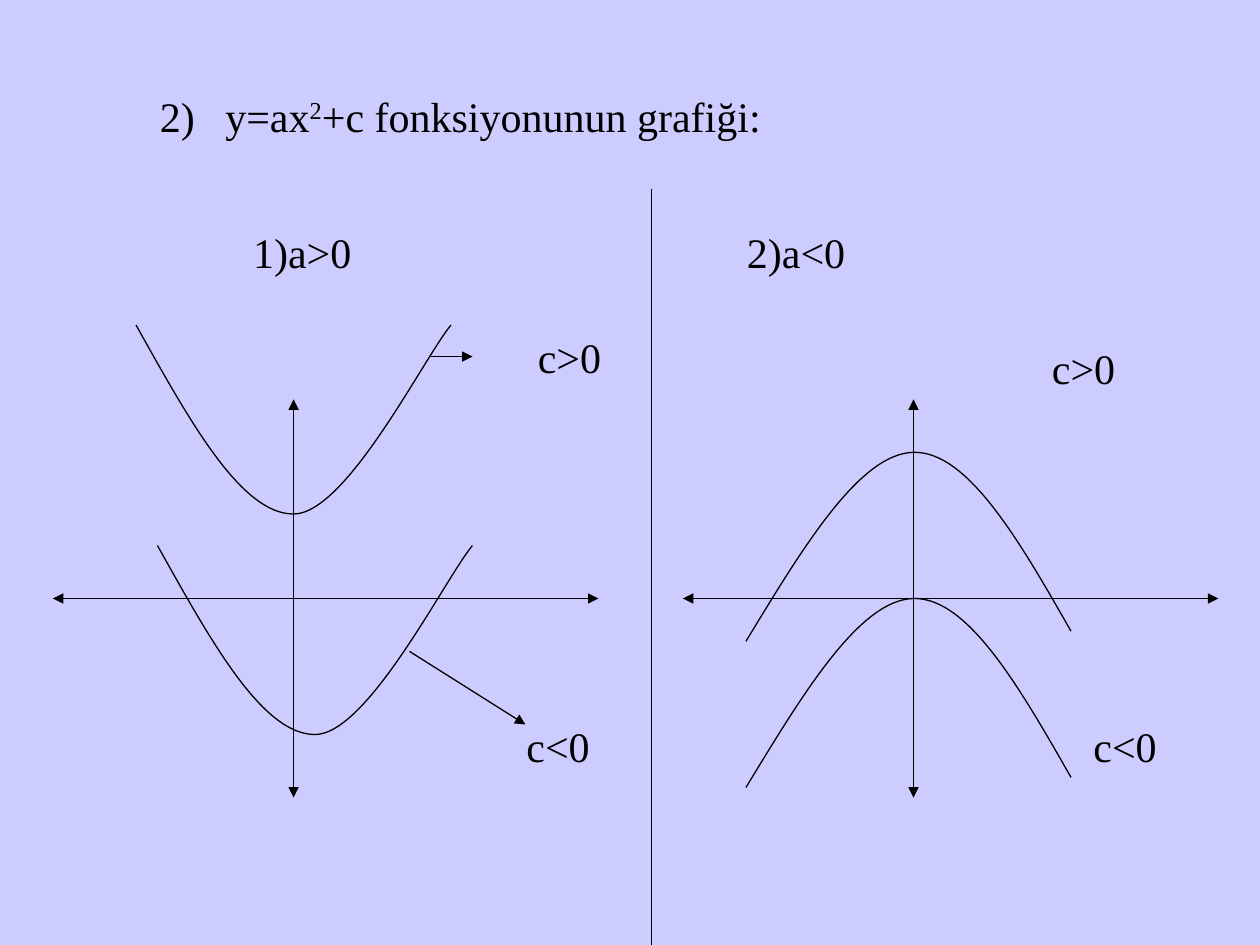
from lxml import etree
from pptx import Presentation
from pptx.dml.color import RGBColor
from pptx.enum import shapes, text
from pptx.oxml.ns import qn
from pptx.util import Inches, Pt

BACK = RGBColor(0xCC, 0xCC, 0xFF)
INK = RGBColor(0, 0, 0)
FONT = "Times New Roman"

# Bezier points: start, then two segments of three points each
UP = [(0, 0), (0.42, 0.75), (0.83, 1.5), (1.25, 1.5),
      (1.67, 1.5), (2.29, 0.25), (2.5, 0)]
DOWN = [(0, 1.51), (0.45, 0.77), (0.9, 0.02), (1.33, 0.01),
        (1.76, 0), (2.17, 0.71), (2.58, 1.43)]


def label(slide, x, y, width, *parts):
    """Add one line of text; every second part is superscript."""
    box = slide.shapes.add_textbox(Inches(x), Inches(y), Inches(width), Inches(0.5))
    frame = box.text_frame
    frame.word_wrap = True
    frame.auto_size = text.MSO_AUTO_SIZE.SHAPE_TO_FIT_TEXT
    para = frame.paragraphs[0]
    for i, part in enumerate(parts):
        run = para.add_run()
        run.text = part
        if i % 2:
            run.font._element.set("baseline", "30000")
    return para


def style(para):
    para.font.name = FONT
    para.font.size = Pt(24)
    para.font.color.rgb = INK


def line(slide, start, end, head=True):
    """Add a straight line, with an arrowhead at its end if wanted."""
    item = slide.shapes.add_connector(
        shapes.MSO_CONNECTOR.STRAIGHT, *map(Inches, start + end))
    item.line.color.rgb = INK
    item.line.width = Pt(0.75)
    if head:
        etree.SubElement(item.line._get_or_add_ln(), qn("a:tailEnd"), type="triangle")
    etree.SubElement(item._element.spPr, qn("a:effectLst"))


def axes(slide, x, left, right, inner):
    """Add a pair of axes, each with arrows pointing both ways."""
    line(slide, (x, 3.33), (x, 6.33))
    line(slide, (x, 3.5), (x, 3.17))
    line(slide, (left, 4.75), (right, 4.75))
    line(slide, (inner, 4.75), (left, 4.75))


def curve(slide, points, x, y):
    """Add an open Bezier curve moved to x, y."""
    spots = [(Inches(x + dx), Inches(y + dy)) for dx, dy in points]
    form = slide.shapes.build_freeform(*spots[0])
    form.add_line_segments(spots[1:], close=False)
    item = form.convert_to_shape()
    item.shadow.inherit = False
    item.fill.background()
    item.line.color.rgb = INK
    item.line.width = Pt(0.75)
    # Join each three straight steps into one cubic segment
    steps = list(item._element.iter(qn("a:lnTo")))
    for i in range(0, len(steps), 3):
        cubic = etree.Element(qn("a:cubicBezTo"))
        steps[i].addprevious(cubic)
        for step in steps[i:i + 3]:
            cubic.append(step[0])
            step.getparent().remove(step)


def main():
    deck = Presentation()
    deck.slide_width, deck.slide_height = Inches(10), Inches(7.5)
    slide = deck.slides.add_slide(deck.slide_layouts[6])
    slide.background.fill.solid()
    slide.background.fill.fore_color.rgb = BACK

    # Title, with a tab after its number
    title = label(slide, 1.17, 0.67, 5, "2)\ty=ax", "2", "+c fonksiyonunun grafiği:")
    tabs = etree.SubElement(title._p.get_or_add_pPr(), qn("a:tabLst"))
    etree.SubElement(tabs, qn("a:tab"), pos=str(Inches(0.52)), algn="l")
    style(title)

    # Divider and axes
    line(slide, (5.17, 1.5), (5.17, 7.5), head=False)
    axes(slide, 2.33, 0.42, 4.75, 0.83)
    axes(slide, 7.25, 5.42, 9.67, 5.75)

    # Parabolas
    for points, x, y in [(UP, 1.08, 2.58), (UP, 1.25, 4.33),
                         (DOWN, 5.92, 4.74), (DOWN, 5.92, 3.58)]:
        curve(slide, points, x, y)

    # Pointers from the left curves to their labels
    line(slide, (3.42, 2.83), (3.75, 2.83))
    line(slide, (3.25, 5.17), (4.17, 5.75))

    # Labels
    for x, y, width, words in [
            (1.91, 1.75, 1.09, "1)a>0"), (5.83, 1.75, 1.42, "2)a<0"),
            (4.17, 2.58, 0.83, "c>0"), (4.08, 5.67, 0.83, "c<0"),
            (8.25, 2.67, 0.92, "c>0"), (8.58, 5.67, 0.76, "c<0")]:
        style(label(slide, x, y, width, words))

    deck.save("out.pptx")


if __name__ == "__main__":
    main()
